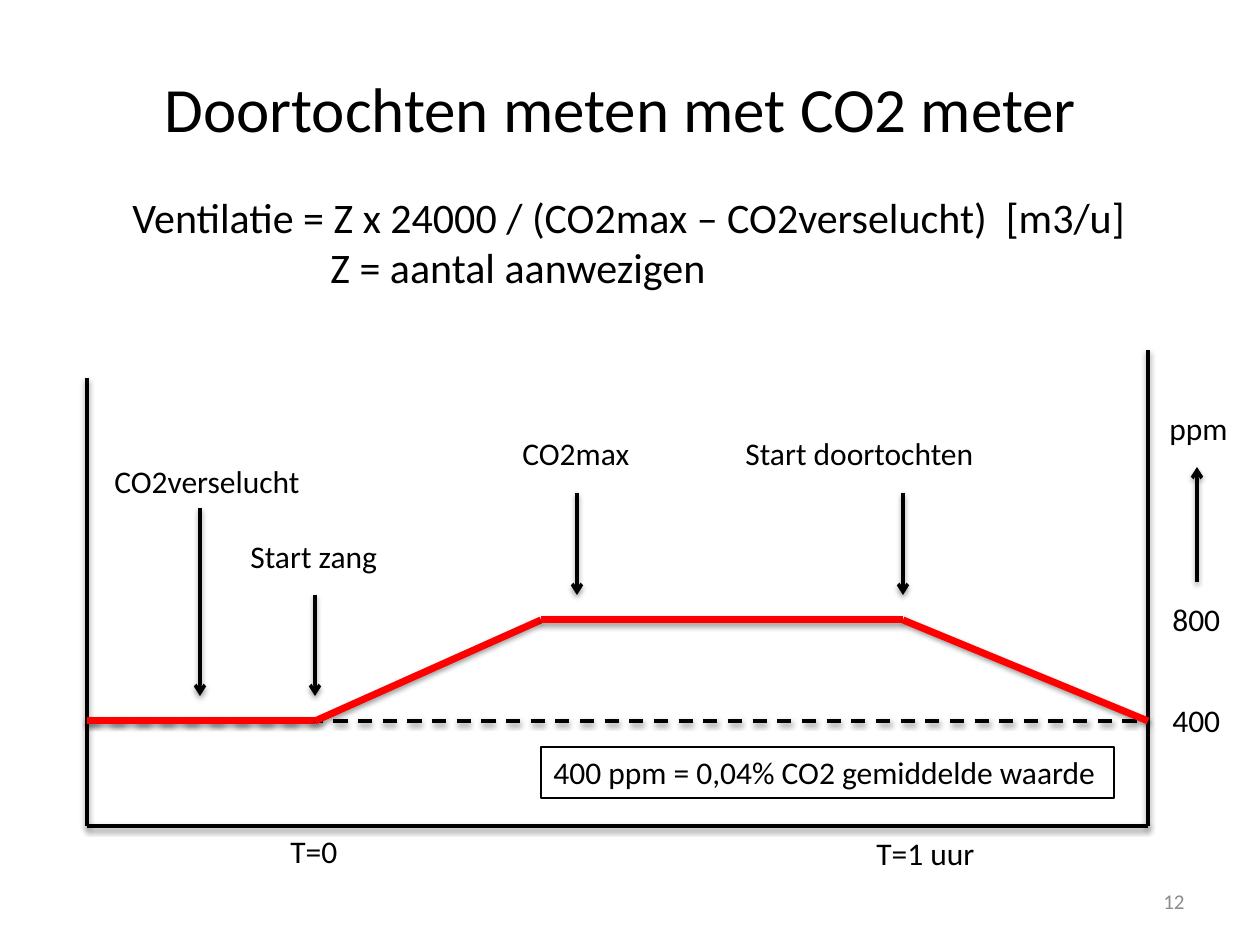
from itertools import pairwise
from lxml.etree import SubElement
from pptx import Presentation
from pptx.dml.color import RGBColor
from pptx.enum.dml import MSO_LINE
from pptx.enum.shapes import MSO_CONNECTOR, MSO_SHAPE
from pptx.enum.text import MSO_ANCHOR, PP_ALIGN
from pptx.oxml import parse_xml
from pptx.oxml.ns import nsdecls, qn
from pptx.util import Pt

COLORS = {"ink": "000000", "curve": "FF0000", "muted": "8C8C8C"}
SHADOW = (
    f'<a:effectLst {nsdecls("a")}><a:outerShdw blurRad="40000" dist="20000" dir="5400000" '
    'rotWithShape="0"><a:srgbClr val="000000"><a:alpha val="38000"/></a:srgbClr>'
    '</a:outerShdw></a:effectLst>'
)


class Deck:
    """Draws styled elements on the current slide, with lengths in px."""

    scale = 914400 / 126
    font = "Calibri"

    def __init__(self, width, height):
        self.prs = Presentation()
        self.prs.slide_width, self.prs.slide_height = self.emu(width, height)
        self.s = self.prs.slides.add_slide(self.prs.slide_layouts[6])

    def emu(self, *lengths):
        return [round(n * self.scale) for n in lengths]

    def color(self, name):
        return RGBColor.from_string(COLORS[name])

    def fill_text(self, sp, lines, size=18, color="ink", align=PP_ALIGN.LEFT, wrap=False,
                  anchor=MSO_ANCHOR.TOP, indents=()):
        tf = sp.text_frame
        for name, value in {"word_wrap": wrap, "vertical_anchor": anchor}.items():
            setattr(tf, name, value)
        for i, line in enumerate(lines):
            p = tf.add_paragraph() if i else tf.paragraphs[0]
            p.alignment = align
            if i < len(indents):
                p._p.get_or_add_pPr().set("marL", str(self.emu(indents[i])[0]))
            r = p.add_run()
            r.text = line
            for name, value in {"name": self.font, "size": Pt(size)}.items():
                setattr(r.font, name, value)
            r.font.color.rgb = self.color(color)

    def text(self, box, *lines, **style):
        self.fill_text(self.s.shapes.add_textbox(*self.emu(*box)), lines, **style)

    def frame(self, box, line):
        sp = self.s.shapes.add_shape(MSO_SHAPE.RECTANGLE, *self.emu(*box))
        sp.shadow.inherit = False
        sp.fill.background()
        sp.line.color.rgb = self.color("ink")
        sp.line.width = Pt(0.75)
        self.fill_text(sp, [line])

    def line(self, start, end, color="ink", width=2, dash=None, arrow=False):
        c = self.s.shapes.add_connector(MSO_CONNECTOR.STRAIGHT, *self.emu(*start, *end))
        c.line.color.rgb = self.color(color)
        for name, value in {"width": Pt(width), "dash_style": dash}.items():
            setattr(c.line, name, value)
        if arrow:
            SubElement(c.line._get_or_add_ln(), qn("a:tailEnd"), type="arrow")
        c._element.spPr.append(parse_xml(SHADOW))


def main():
    left, right, bottom, base, peak = 87, 1148, 826, 721, 620
    start, rise, fall = 315, 541, 903

    deck = Deck(1260, 945)
    deck.text((152, 63, 961, 89), "Doortochten meten met CO2 meter", size=36)
    deck.text((120, 185, 1028, 165),
              "Ventilatie = Z x 24000 / (CO2max – CO2verselucht)  [m3/u]",
              "Z = aantal aanwezigen", size=24, indents=(0, 198))

    deck.line((left, 378), (left, bottom))
    deck.line((right, bottom), (left, bottom))
    deck.line((left, base), (right, base), dash=MSO_LINE.DASH)
    deck.line((right, 350), (right, bottom))

    curve = [(left, base), (start, base), (rise, peak), (fall, peak), (right, base)]
    for a, b in pairwise(curve):
        deck.line(a, b, color="curve", width=4)

    for x, y1, y2 in [(200, 508, 696), (start, 595, 696), (577, 493, 595),
                      (fall, 493, 595), (1197, 582, 467)]:
        deck.line((x, y1), (x, y2), arrow=True)

    for x, y, width, label in [
        (102, 456, 213, "CO2verselucht"), (238, 531, 154, "Start zang"),
        (510, 428, 134, "CO2max"), (733, 428, 256, "Start doortochten"),
        (278, 826, 73, "T=0"), (864, 828, 125, "T=1 uur"),
        (1157, 403, 84, "ppm"), (1160, 594, 74, "800"), (1160, 695, 74, "400"),
    ]:
        deck.text((x, y, width, 51), label)

    deck.frame((541, 747, 573, 51), "400 ppm = 0,04% CO2 gemiddelde waarde")
    deck.text((903, 876, 294, 50), "12", size=12, color="muted", wrap=True,
              align=PP_ALIGN.RIGHT, anchor=MSO_ANCHOR.MIDDLE)
    deck.prs.save("out.pptx")


if __name__ == "__main__":
    main()
